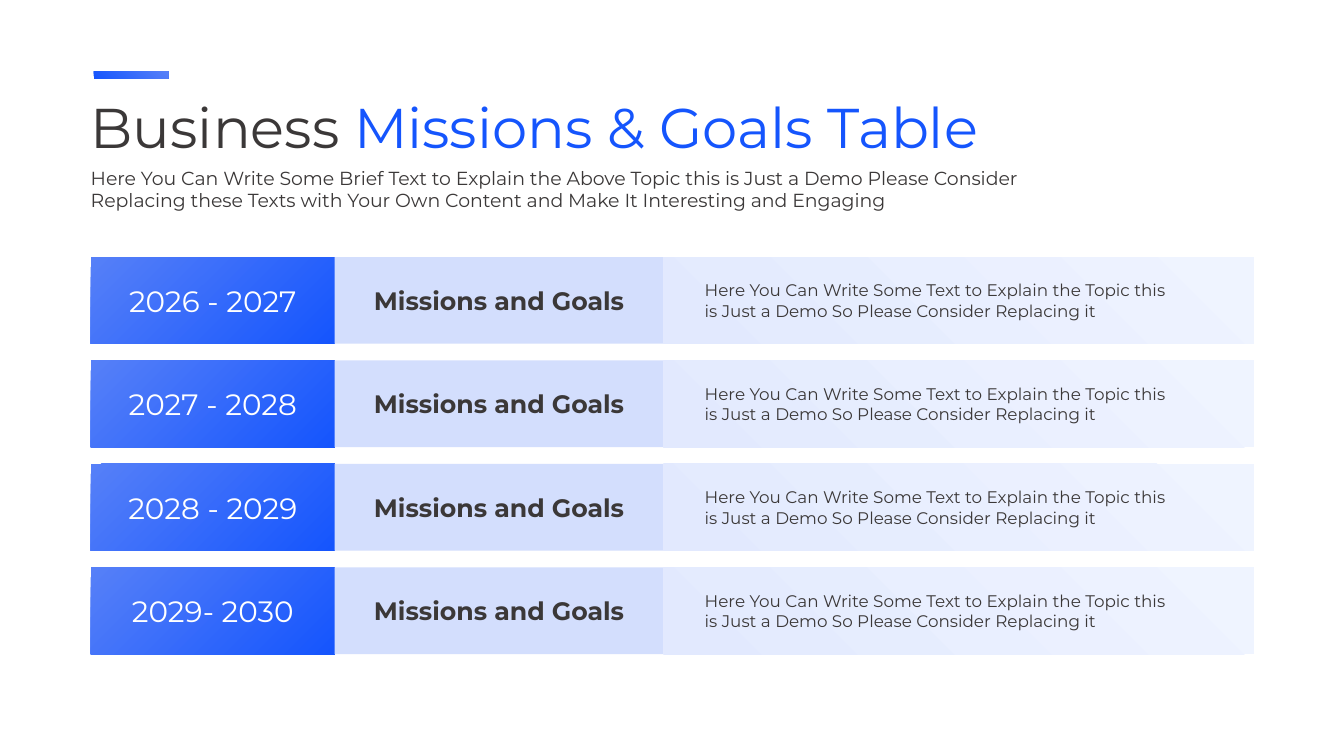
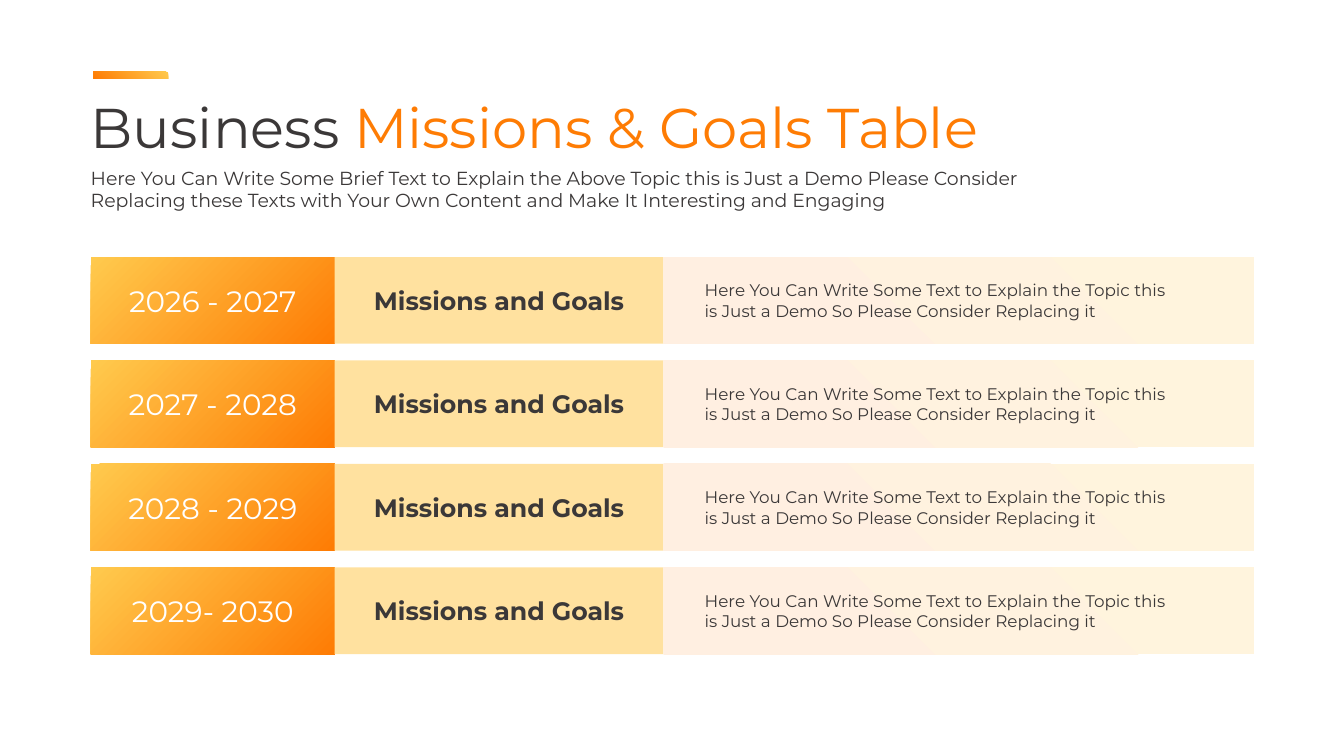
from dataclasses import dataclass

from lxml.etree import SubElement
from pptx import Presentation
from pptx.dml.color import RGBColor
from pptx.enum.shapes import MSO_SHAPE as Preset
from pptx.enum.text import MSO_ANCHOR as Anchor, MSO_AUTO_SIZE as AutoSize, PP_ALIGN as Align
from pptx.oxml.ns import qn
from pptx.util import Inches, Pt


@dataclass(frozen=True)
class Box:
    left: float
    top: float
    width: float
    height: float

    def lengths(self):
        return [Inches(n) for n in (self.left, self.top, self.width, self.height)]

    def inside(self, left, top, width, height):
        return Box(self.left + left, self.top + top, width, height)


@dataclass(frozen=True)
class Gradient:
    start: str
    end: str
    first_stop: float = 0
    angle: float = 0
    focus: tuple = ()


@dataclass(frozen=True)
class Theme:
    title: Gradient
    bar: Gradient
    year: Gradient
    goal: str
    detail: Gradient
    ink: str = "3B3838"
    paper: str = "FFFFFF"
    font: str = "Montserrat"
    title_size: float = 40
    intro_size: float = 13.5
    year_size: float = 21
    goal_size: float = 18
    detail_size: float = 12


BOTTOM_RIGHT = ("l", "t")
BOTTOM_LEFT = ("t", "r")

BLUE = Theme(
    title=Gradient("1555FD", "5680F8", angle=180),
    bar=Gradient("1555FD", "5680F8", angle=45),
    year=Gradient("1555FD", "5680F8", focus=BOTTOM_RIGHT),
    goal="D3DEFD",
    detail=Gradient("E2E9FE", "EFF4FF", focus=BOTTOM_LEFT),
)
ORANGE = Theme(
    title=Gradient("FE7C04", "FFCA4E", angle=180),
    bar=Gradient("FE7C04", "FFCA4E", focus=BOTTOM_LEFT),
    year=Gradient("FE7C04", "FFCA4E", focus=BOTTOM_RIGHT),
    goal="FFE19F",
    detail=Gradient("FFEFE1", "FFF4DD", first_stop=0.1, focus=BOTTOM_LEFT),
)

SLIDE_WIDTH, SLIDE_HEIGHT = 13.33, 7.5
HEADER = Box(0.8, 0.71, 9.78, 1.45)
TABLE = Box(0.9, 2.55, 11.54, 3.94)
COLUMN_WIDTHS = (2.42, 3.26, 5.86)
ROW_HEIGHT = 0.86
DETAIL_INSET = 0.41

TITLE = ("Business ", "Missions & Goals Table")
INTRO = (
    "Here You Can Write Some Brief Text to Explain the Above Topic this is Just a Demo Please Consider",
    "Replacing these Texts with Your Own Content and Make It Interesting and Engaging",
)
YEARS = ("2026 - 2027", "2027 - 2028", "2028 - 2029", "2029- 2030")
GOAL = ("Missions and Goals",)
DETAIL = (
    "Here You Can Write Some Text to Explain the Topic this",
    "is Just a Demo So Please Consider Replacing it",
)


def apply_fill(fill, paint):
    if isinstance(paint, str):
        fill.solid()
        fill.fore_color.rgb = RGBColor.from_string(paint)
        return
    fill.gradient()
    fill.gradient_angle = paint.angle
    stops = zip(fill.gradient_stops, (paint.start, paint.end), (paint.first_stop, 1))
    for stop, colour, position in stops:
        stop.color.rgb = RGBColor.from_string(colour)
        stop.position = position


def set_focus(shape, sides):
    gradient = shape.element.spPr.find(qn("a:gradFill"))
    linear = gradient.find(qn("a:lin"))
    radial = SubElement(gradient, qn("a:path"), {"path": "circle"})
    SubElement(radial, qn("a:fillToRect"), {side: "100000" for side in sides})
    gradient.replace(linear, radial)


def add_panel(page, box, paint):
    shape = page.shapes.add_shape(Preset.RECTANGLE, *box.lengths())
    shape.shadow.inherit = False
    shape.line.fill.background()
    apply_fill(shape.fill, paint)
    if isinstance(paint, Gradient) and paint.focus:
        set_focus(shape, paint.focus)
    return shape


def style_span(span, theme, size, paint, bold=False):
    span.font.name = theme.font
    span.font.size = Pt(size)
    span.font.bold = bold
    apply_fill(span.font.fill, paint)


def write_lines(frame, lines, theme, size, colour, align, bold=False):
    frame.word_wrap = True
    frame.auto_size = AutoSize.NONE
    frame.text = "\n".join(lines)
    for para in frame.paragraphs:
        para.alignment = align
        para.space_before = Pt(0)
        for span in para.runs:
            style_span(span, theme, size, colour, bold)


def place(shape, box):
    shape.left, shape.top, shape.width, shape.height = box.lengths()


def add_header(page, box, theme):
    add_panel(page, box.inside(0.13, 0, 0.74, 0.07), theme.bar)

    title = page.shapes.title
    place(title, box.inside(0, 0.16, box.width, 0.77))
    frame = title.text_frame
    frame.word_wrap = True
    frame.auto_size = AutoSize.NONE
    frame.vertical_anchor = Anchor.TOP
    para = frame.paragraphs[0]
    para.alignment = Align.LEFT
    for text, paint in zip(TITLE, (theme.ink, theme.title)):
        span = para.add_run()
        span.text = text
        style_span(span, theme, theme.title_size, paint)

    intro = page.placeholders[1]
    place(intro, box.inside(0, 0.89, box.width, 0.56))
    write_lines(intro.text_frame, INTRO, theme, theme.intro_size, theme.ink, Align.LEFT)
    intro.text_frame.vertical_anchor = Anchor.TOP
    for para in intro.text_frame.paragraphs:
        properties = para._p.get_or_add_pPr()
        properties.set("marL", "0")
        properties.set("indent", "0")
        SubElement(properties, qn("a:buNone"))


def add_row(page, box, year, theme):
    cells = (
        ((year,), theme.year, theme.year_size, theme.paper, Align.CENTER, False, 0.1),
        (GOAL, theme.goal, theme.goal_size, theme.ink, Align.CENTER, True, 0.1),
        (DETAIL, theme.detail, theme.detail_size, theme.ink, Align.LEFT, False, DETAIL_INSET),
    )
    offset = 0
    for width, (lines, paint, size, colour, align, bold, inset) in zip(COLUMN_WIDTHS, cells):
        panel = add_panel(page, box.inside(offset, 0, width, box.height), paint)
        frame = panel.text_frame
        frame.margin_left = Inches(inset)
        frame.vertical_anchor = Anchor.MIDDLE
        write_lines(frame, lines, theme, size, colour, align, bold)
        offset += width


def add_goal_rows(page, box, theme):
    pitch = (box.height - ROW_HEIGHT) / (len(YEARS) - 1)
    for index, year in enumerate(YEARS):
        add_row(page, box.inside(0, index * pitch, box.width, ROW_HEIGHT), year, theme)


def add_goals_slide(deck, theme):
    page = deck.slides.add_slide(deck.slide_layouts[1])
    apply_fill(page.background.fill, theme.paper)
    add_header(page, HEADER, theme)
    add_goal_rows(page, TABLE, theme)


def main():
    deck = Presentation()
    deck.slide_width, deck.slide_height = Inches(SLIDE_WIDTH), Inches(SLIDE_HEIGHT)
    for theme in (BLUE, ORANGE):
        add_goals_slide(deck, theme)
    deck.save("out.pptx")


if __name__ == "__main__":
    main()
